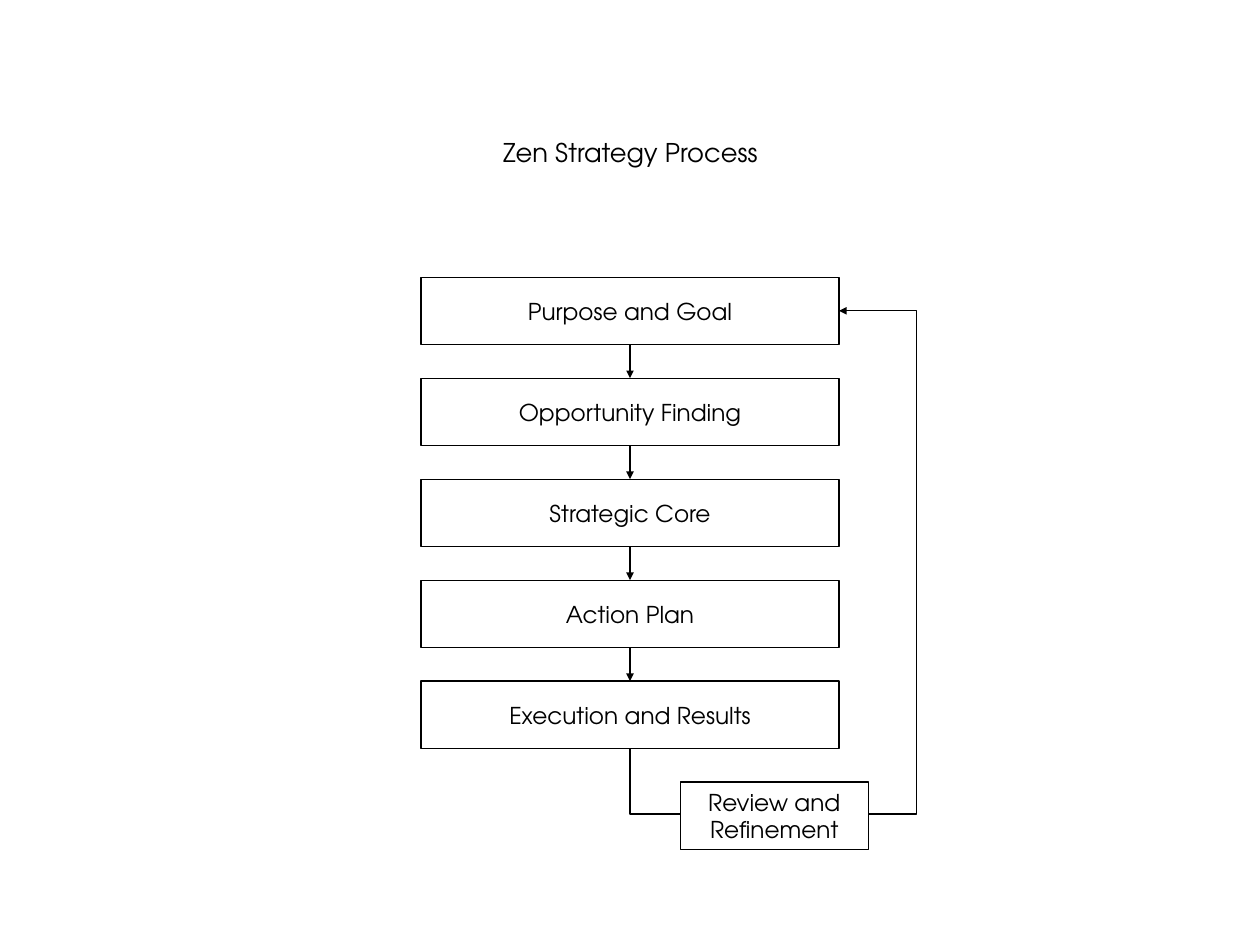
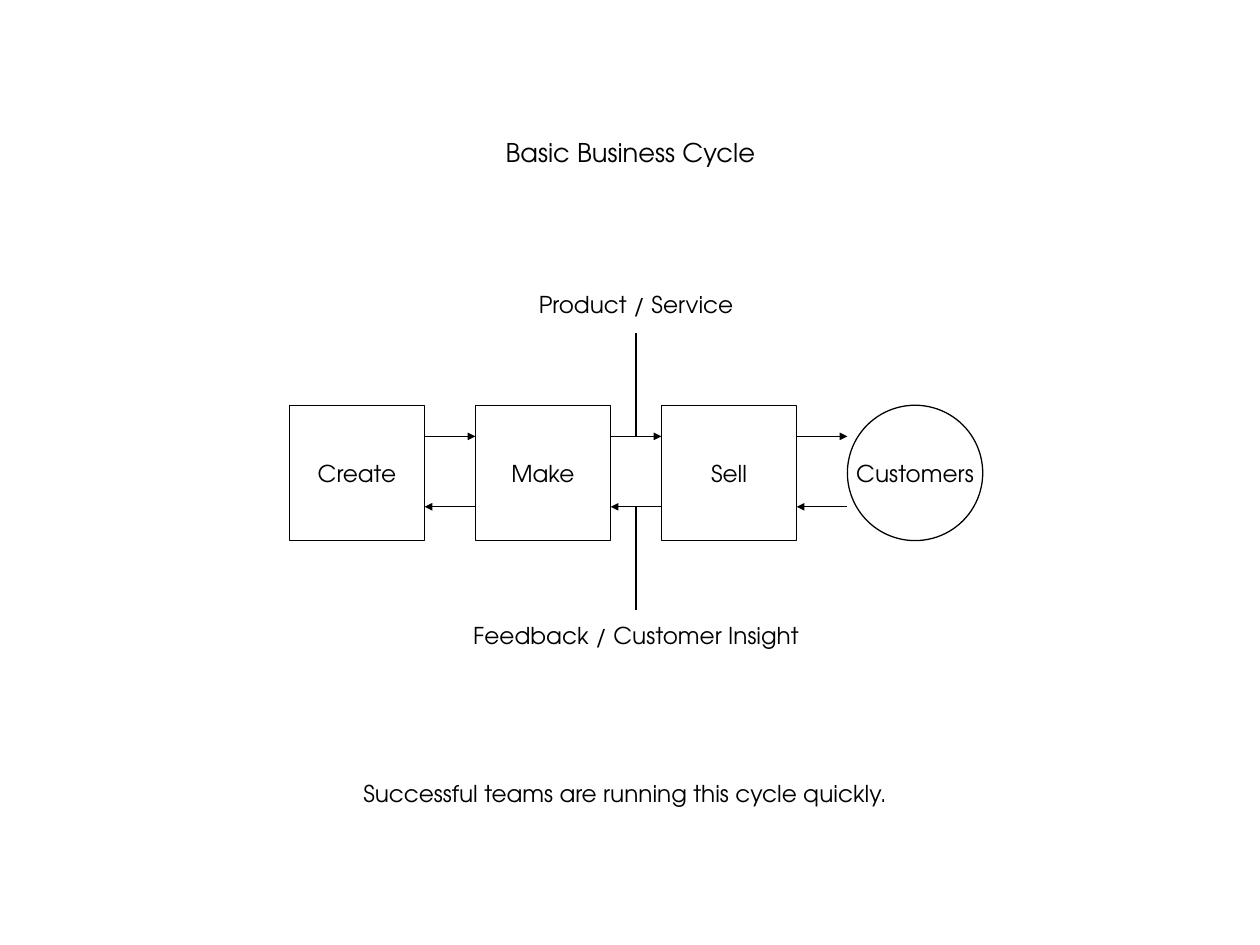
from dataclasses import dataclass

from lxml import etree
from pptx import Presentation
from pptx.dml.color import RGBColor
from pptx.enum.shapes import MSO_CONNECTOR, MSO_SHAPE
from pptx.enum.text import MSO_ANCHOR, MSO_AUTO_SIZE, PP_ALIGN
from pptx.oxml.ns import qn
from pptx.util import Inches, Pt

RECT, OVAL = MSO_SHAPE.RECTANGLE, MSO_SHAPE.OVAL
STRAIGHT, ELBOW = MSO_CONNECTOR.STRAIGHT, MSO_CONNECTOR.ELBOW
LEFT, CENTER = PP_ALIGN.LEFT, PP_ALIGN.CENTER
TOP, MIDDLE = MSO_ANCHOR.TOP, MSO_ANCHOR.MIDDLE
FIT = MSO_AUTO_SIZE.SHAPE_TO_FIT_TEXT
SITE_TOP, SITE_BOTTOM, SITE_RIGHT = 0, 2, 3


@dataclass(frozen=True)
class Theme:
    font: str = "TeX Gyre Adventor"
    ink: RGBColor = RGBColor(0, 0, 0)
    paper: RGBColor = RGBColor(255, 255, 255)
    title: Pt = Pt(20)
    body: Pt = Pt(18)
    line: Pt = Pt(1)


@dataclass(frozen=True)
class Box:
    x: float
    y: float
    w: float
    h: float

    def emu(self):
        return [Inches(v) for v in (self.x, self.y, self.w, self.h)]


THEME = Theme()
PAGE = Box(0, 0, 13.59, 10.19)
TITLE_BOX = Box(5.32, 1.42, 2.96, 0.44)
FLOW_BOX = Box(4.54, 2.99, 4.51, 5.08)
CYCLE_BOX = Box(3.12, 4.37, 7.48, 1.46)
NOTE_BOX = Box(3.82, 8.35, 5.94, 0.4)
LABEL_SIZE = (4.29, 0.4)


def apply(obj, **values):
    for name, value in values.items():
        setattr(obj, name, value)


def write(sp, text, size=THEME.body, align=CENTER, **frame):
    tf = sp.text_frame
    apply(tf, **frame)
    p = tf.paragraphs[0]
    p.alignment = align
    r = p.add_run()
    r.text = text
    apply(r.font, name=THEME.font, size=size, bold=False)
    r.font.color.rgb = THEME.ink


def add_title(s, text, box):
    sp = s.shapes.title
    apply(sp, **dict(zip(("left", "top", "width", "height"), box.emu())))
    write(sp, text, THEME.title, vertical_anchor=TOP, word_wrap=False, auto_size=FIT)


def add_text(s, text, box, align=CENTER):
    sp = s.shapes.add_textbox(*box.emu())
    write(sp, text, align=align, word_wrap=False, auto_size=FIT)


def add_node(s, text, box, kind=RECT, fill=None, wrap=True):
    sp = s.shapes.add_shape(kind, *box.emu())
    sp.shadow.inherit = False
    if fill is None:
        sp.fill.background()
    else:
        sp.fill.solid()
        sp.fill.fore_color.rgb = fill
    sp.line.color.rgb = THEME.ink
    sp.line.width = THEME.line
    write(sp, text, vertical_anchor=MIDDLE, word_wrap=wrap)
    return sp


def add_line(s, start, end, arrow=True, kind=STRAIGHT):
    c = s.shapes.add_connector(kind, *(Inches(v) for v in (*start, *end)))
    c.line.color.rgb = THEME.ink
    c.line.width = THEME.line
    if arrow:
        etree.SubElement(c.line._get_or_add_ln(), qn("a:tailEnd"), type="triangle")
    etree.SubElement(c._element.spPr, qn("a:effectLst"))
    return c


def link(s, first, first_site, last, last_site, kind=STRAIGHT):
    c = add_line(s, (0, 0), (1, 1), kind=kind)
    c.begin_connect(first, first_site)
    c.end_connect(last, last_site)
    return c


def bend_back(c, *bends):
    x, y, w, h = c.left, c.top, c.width, c.height
    apply(c, left=x + (w - h) // 2, top=y + (h - w) // 2, width=h, height=w, rotation=90)
    sp_pr = c._element.spPr
    xfrm = sp_pr.find(qn("a:xfrm"))
    for flip in ("flipH", "flipV"):
        xfrm.set(flip, "1")
    geom = sp_pr.find(qn("a:prstGeom"))
    geom.set("prst", "bentConnector4")
    av = geom.find(qn("a:avLst"))
    if av is None:
        av = etree.SubElement(geom, qn("a:avLst"))
    for i, bend in enumerate(bends, 1):
        etree.SubElement(av, qn("a:gd"), name=f"adj{i}", fmla=f"val {round(bend * 100000)}")


def add_flow(s, box, steps, review):
    gap = 0.5
    row = box.h / (len(steps) + gap * (len(steps) - 1))
    pitch = row * (1 + gap)
    nodes = [add_node(s, text, Box(box.x, box.y + i * pitch, box.w, row))
             for i, text in enumerate(steps)]
    for upper, lower in zip(nodes, nodes[1:]):
        link(s, upper, SITE_BOTTOM, lower, SITE_TOP)
    bend_back(link(s, nodes[-1], SITE_BOTTOM, nodes[0], SITE_RIGHT, ELBOW), -0.15, 1.37)
    add_node(s, review, Box(box.x + 0.62 * box.w, box.y + box.h + gap * row,
                            0.45 * box.w, row), fill=THEME.paper)


def add_cycle(s, box, stages, above, below):
    side = box.h
    gap = (box.w - len(stages) * side) / (len(stages) - 1)
    pitch = side + gap
    out_y, back_y = (box.y + share * side for share in (0.23, 0.75))
    for i, text in enumerate(stages):
        x = box.x + i * pitch
        kind = OVAL if text == stages[-1] else RECT
        add_node(s, text, Box(x, box.y, side, side), kind, wrap=False)
        if i:
            add_line(s, (x - gap, out_y), (x, out_y))
            add_line(s, (x, back_y), (x - gap, back_y))
    mid = box.x + 2 * pitch - gap / 2
    w, h = LABEL_SIZE
    for text, label, tip, y in ((above, -0.88, -0.53, out_y), (below, 1.56, 1.51, back_y)):
        add_line(s, (mid, y), (mid, box.y + tip * side), arrow=False)
        add_text(s, text, Box(mid - w / 2, box.y + label * side, w, h))


def add_slide(prs, title):
    s = prs.slides.add_slide(prs.slide_layouts[5])
    s.background.fill.solid()
    s.background.fill.fore_color.rgb = THEME.paper
    add_title(s, title, TITLE_BOX)
    return s


def main():
    prs = Presentation()
    prs.slide_width, prs.slide_height = PAGE.emu()[2:]
    s = add_slide(prs, "Zen Strategy Process")
    add_flow(s, FLOW_BOX, ["Purpose and Goal", "Opportunity Finding", "Strategic Core",
                           "Action Plan", "Execution and Results"], "Review and Refinement")
    s = add_slide(prs, "Basic Business Cycle")
    add_cycle(s, CYCLE_BOX, ["Create", "Make", "Sell", "Customers"],
              "Product / Service", "Feedback / Customer Insight")
    add_text(s, "Successful teams are running this cycle quickly.", NOTE_BOX, LEFT)
    prs.save("out.pptx")


if __name__ == "__main__":
    main()
